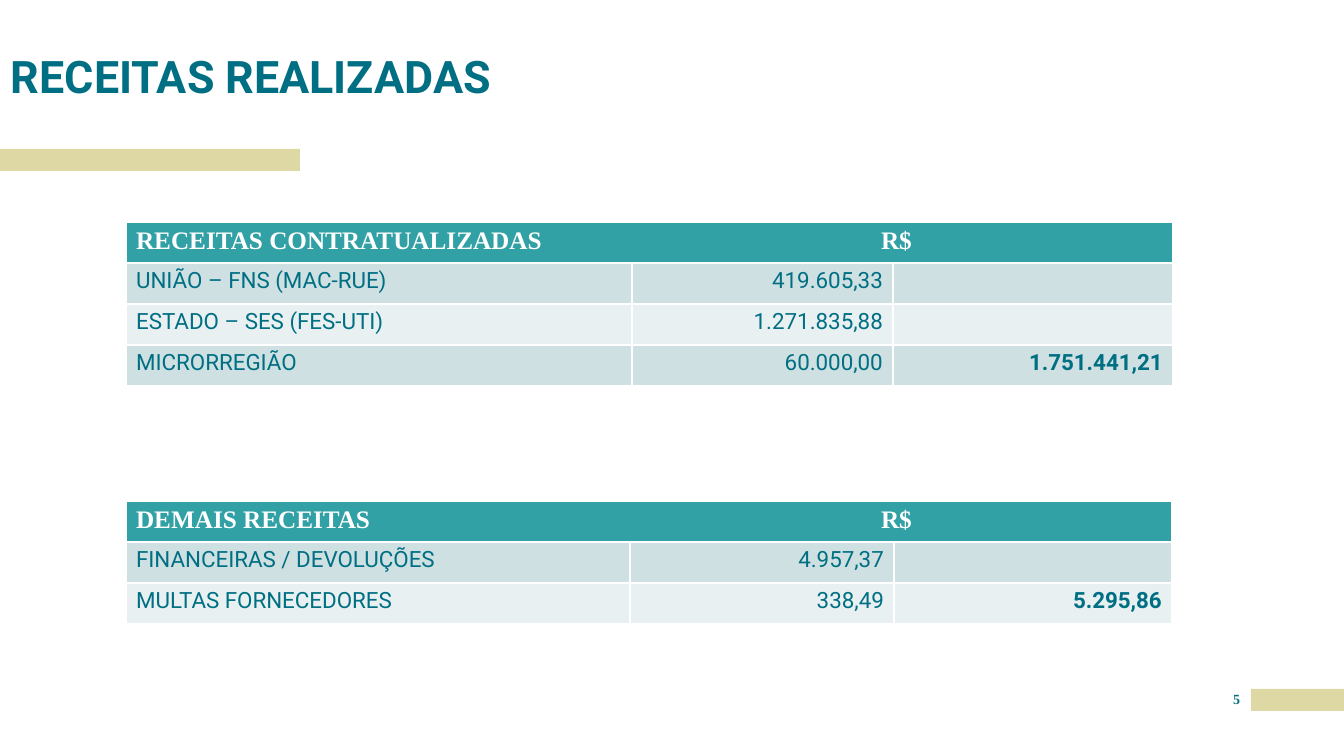
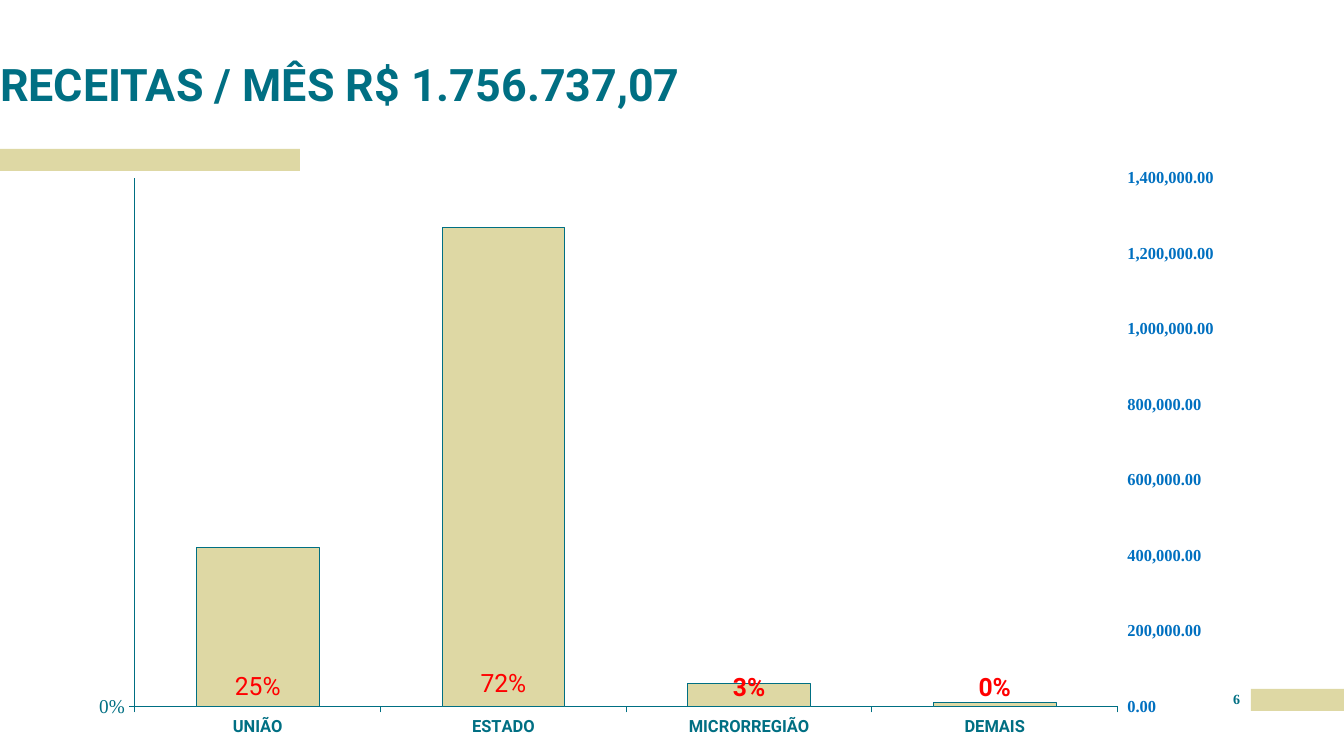
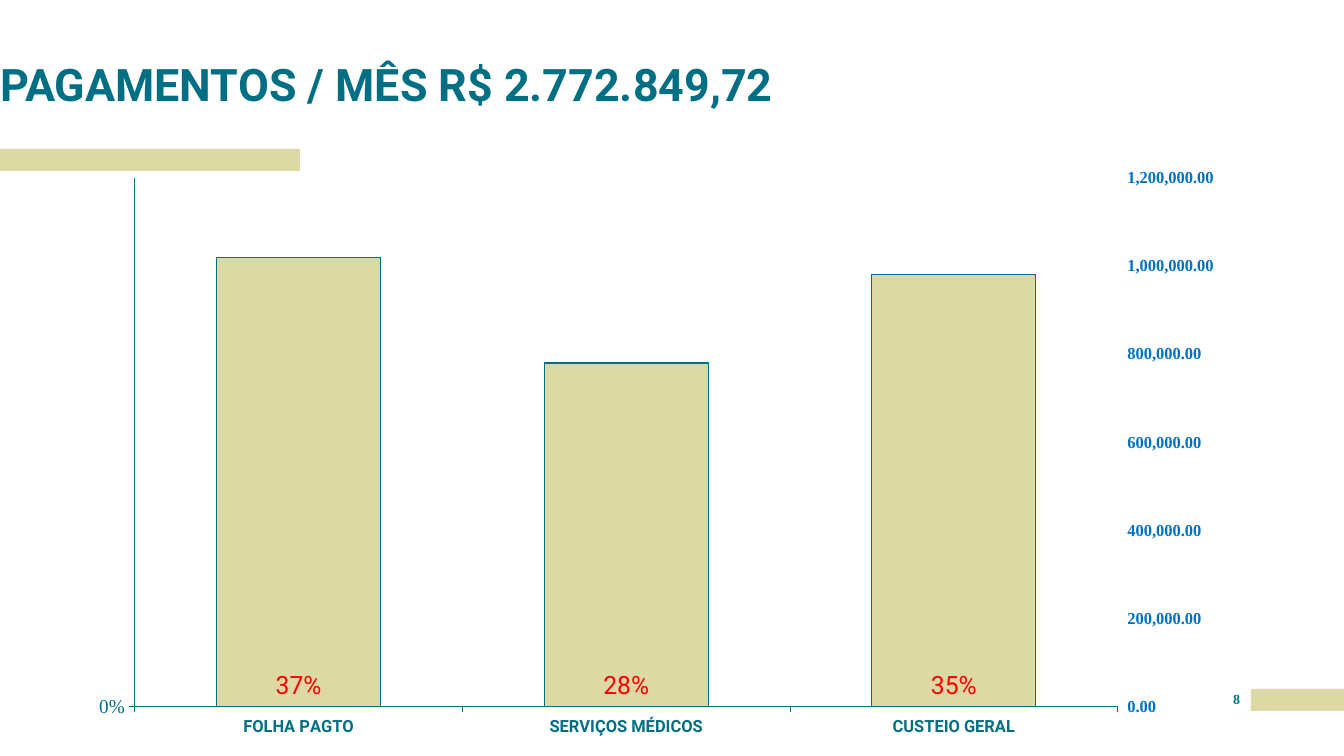
"""Build three slides on hospital revenue and payments."""
import copy

import lxml.etree
import pptx
import pptx.chart.axis
import pptx.chart.data
import pptx.dml.color
import pptx.enum.chart
import pptx.enum.shapes
import pptx.enum.text
import pptx.oxml
import pptx.oxml.ns
import pptx.util

RGBColor = pptx.dml.color.RGBColor
TEAL = RGBColor(0x00, 0x6F, 0x83)
HEADER = RGBColor(0x32, 0xA1, 0xA6)
ROW_DARK = RGBColor(0xCE, 0xE0, 0xE1)
ROW_LIGHT = RGBColor(0xE8, 0xF0, 0xF1)
GRID = RGBColor(0xA5, 0xE1, 0xE4)
SAND = RGBColor(0xDE, 0xD8, 0xA4)
BLUE = RGBColor(0x00, 0x70, 0xC0)
RED = RGBColor(0xFF, 0x00, 0x00)
WHITE = RGBColor(0xFF, 0xFF, 0xFF)
SANS = "Roboto"
SERIF = "Times New Roman"
ALIGN = pptx.enum.text.PP_ALIGN
qn = pptx.oxml.ns.qn


def px(*lengths):
    """Turn pixels into a list of EMU."""
    return [pptx.util.Emu(round(length * 914400 / 100.8)) for length in lengths]


def set_font(font, name, size, color, bold):
    """Set the four font properties."""
    font.name = name
    font.size = pptx.util.Pt(size)
    font.color.rgb = color
    font.bold = bold


deck = pptx.Presentation()
deck.slide_width, deck.slide_height = px(1344, 756)
layout = deck.slide_layouts[5]

titles = [
    ("RECEITAS REALIZADAS", "5", (11, 0, 941, 103)),
    ("RECEITAS / MÊS R$ 1.756.737,07", "6", (0, 45, 860, 66)),
    ("PAGAMENTOS / MÊS R$ 2.772.849,72", "8", (0, 45, 860, 66)),
]
pages = []
for heading, number, place in titles:
    page = deck.slides.add_slide(layout)
    pages.append(page)
    title = page.shapes.title
    title.left, title.top, title.width, title.height = px(*place)
    number_box = page.shapes.add_textbox(*px(1222, 691, 29, 25))
    for box, text, size, font_name, align in (
        (title, heading, 32, SANS, ALIGN.LEFT),
        (number_box, number, 10, SERIF, ALIGN.CENTER),
    ):
        frame = box.text_frame
        frame.text = text
        frame.word_wrap = True
        frame.margin_left = frame.margin_right = 0
        frame.margin_top = frame.margin_bottom = 0
        frame.paragraphs[0].alignment = align
        set_font(frame.paragraphs[0].runs[0].font, font_name, size, TEAL, True)
    title.text_frame.vertical_anchor = pptx.enum.text.MSO_ANCHOR.BOTTOM
    title.text_frame.paragraphs[0].line_spacing = 0.9

for place in ((1251, 689, 93, 22), (0, 149, 300, 22)):
    band = pages[0].shapes.add_shape(pptx.enum.shapes.MSO_SHAPE.RECTANGLE, *px(*place))
    band.shadow.inherit = False
    band.fill.solid()
    band.fill.fore_color.rgb = SAND
    band.line.fill.background()
    layout.shapes.element.append(band.element)

tables = [
    (126, 222, (506, 261, 280), [
        ("RECEITAS CONTRATUALIZADAS\tR$", "", ""),
        ("UNIÃO – FNS (MAC-RUE)", "419.605,33", ""),
        ("ESTADO – SES (FES-UTI)", "1.271.835,88", ""),
        ("MICRORREGIÃO", "60.000,00", "1.751.441,21"),
    ]),
    (126, 501, (504, 264, 278), [
        ("DEMAIS RECEITAS\tR$", "", ""),
        ("FINANCEIRAS / DEVOLUÇÕES", "4.957,37", ""),
        ("MULTAS FORNECEDORES", "338,49", "5.295,86"),
    ]),
]
for left, top, widths, rows in tables:
    holder = pages[0].shapes.add_table(
        len(rows), 3, *px(left, top, sum(widths), 41 * len(rows)))
    table = holder.table
    for column, width in zip(table.columns, px(*widths)):
        column.width = width
    table.cell(0, 0).merge(table.cell(0, 2))
    for r, texts in enumerate(rows):
        for c, text in enumerate(texts):
            cell = table.cell(r, c)
            cell.fill.solid()
            cell.fill.fore_color.rgb = (
                HEADER if r == 0 else ROW_DARK if r % 2 else ROW_LIGHT)
            if not text:
                continue
            para = cell.text_frame.paragraphs[0]
            para.text = text
            para.alignment = ALIGN.RIGHT if c else ALIGN.LEFT
            if r == 0:
                set_font(para.runs[0].font, SERIF, 18, WHITE, True)
            else:
                set_font(para.runs[0].font, SANS, 16, TEAL, c == 2)
    tabs = lxml.etree.SubElement(holder.element.find(".//" + qn("a:pPr")), qn("a:tabLst"))
    lxml.etree.SubElement(tabs, qn("a:tab"), pos=str(px(745)[0]), algn="l")

charts = [
    (pages[1], ["UNIÃO", "ESTADO", "MICRORREGIÃO", "DEMAIS"], [0.24, 0.72, 0.03, 0],
     [420000, 1270000, 60000, 10000], ["25%", "72%"], 1400000),
    (pages[2], ["FOLHA PAGTO", "SERVIÇOS MÉDICOS", "CUSTEIO GERAL"], [0.37, 0.28, 0.35],
     [1020000, 780000, 980000], ["37%", "28%", "35%"], 1200000),
]
TICK_OUT = pptx.enum.chart.XL_TICK_MARK.OUTSIDE
LABEL_END = pptx.enum.chart.XL_LABEL_POSITION.OUTSIDE_END
LAYOUT_XML = (
    '<c:layout xmlns:c="http://schemas.openxmlformats.org/drawingml/2006/chart">'
    '<c:manualLayout><c:layoutTarget val="inner"/><c:xMode val="edge"/>'
    '<c:yMode val="edge"/><c:x val="0.088"/><c:y val="0.031"/>'
    '<c:w val="0.849"/><c:h val="0.905"/></c:manualLayout></c:layout>')

for page, categories, shares, amounts, share_labels, top_amount in charts:
    data = pptx.chart.data.CategoryChartData()
    data.categories = categories
    data.add_series("Series 1", shares, "0%")
    data.add_series("Series 2", amounts, "#,##0.00")
    chart = page.shapes.add_chart(
        pptx.enum.chart.XL_CHART_TYPE.COLUMN_CLUSTERED, *px(33, 160, 1181, 584), data).chart
    chart.has_title = False
    chart.has_legend = False
    set_font(chart.font, SERIF, 10, TEAL, False)
    plot = chart.plots[0]
    plot.vary_by_categories = False
    plot.gap_width = 100
    plot.overlap = 100

    plot_area = chart.element.find(".//" + qn("c:plotArea"))
    for old_layout in plot_area.findall(qn("c:layout")):
        plot_area.remove(old_layout)
    plot_area.insert(0, pptx.oxml.parse_xml(LAYOUT_XML))
    share_bars = plot_area.find(qn("c:barChart"))
    amount_bars = copy.deepcopy(share_bars)
    share_bars.remove(share_bars.findall(qn("c:ser"))[1])
    amount_bars.remove(amount_bars.findall(qn("c:ser"))[0])
    share_bars.addnext(amount_bars)
    for axis_id, value in zip(amount_bars.findall(qn("c:axId")), ("100", "200")):
        axis_id.set("val", value)

    left_element = plot_area.find(qn("c:valAx"))
    right_element = copy.deepcopy(left_element)
    hidden_element = copy.deepcopy(plot_area.find(qn("c:catAx")))
    left_element.addnext(right_element)
    right_element.addnext(hidden_element)
    for element, settings in (
        (right_element, {"axId": "200", "crossAx": "100", "crosses": "max", "axPos": "r"}),
        (hidden_element, {"axId": "100", "crossAx": "200", "delete": "1"}),
    ):
        for tag, value in settings.items():
            element.find(qn("c:" + tag)).set("val", value)
    left_axis = pptx.chart.axis.ValueAxis(left_element)
    right_axis = pptx.chart.axis.ValueAxis(right_element)

    for axis, font_name, size, color, bold in (
        (chart.category_axis, SANS, 12, TEAL, True),
        (left_axis, SERIF, 14, TEAL, False),
        (right_axis, SERIF, 12, BLUE, True),
    ):
        axis.major_tick_mark = TICK_OUT
        set_font(axis.tick_labels.font, font_name, size, color, bold)
        axis.format.line.color.rgb = TEAL
        axis.format.line.width = pptx.util.Pt(0.75)
    right_axis.format.line.fill.background()
    right_axis.has_major_gridlines = False
    grid_line = left_axis.major_gridlines.format.line
    grid_line.color.rgb = GRID
    grid_line.width = pptx.util.Pt(0.75)
    for axis, maximum, step, number_format in (
        (left_axis, 100, 10000, "0%"),
        (right_axis, top_amount, 200000, "#,##0.00"),
    ):
        axis.minimum_scale = 0
        axis.maximum_scale = maximum
        axis.major_unit = step
        axis.tick_labels.number_format = number_format
        axis.tick_labels.number_format_is_linked = False

    share_series, amount_series = [part.series[0] for part in chart.plots]
    for series, color in ((share_series, TEAL), (amount_series, SAND)):
        series.format.fill.solid()
        series.format.fill.fore_color.rgb = color
    amount_series.format.line.color.rgb = TEAL
    amount_series.format.line.width = pptx.util.Pt(0.75)

    labels = share_series.data_labels
    labels.show_value = True
    labels.number_format = "0%"
    labels.number_format_is_linked = False
    labels.position = LABEL_END
    set_font(labels.font, SANS, 18, RED, True)
    for index, text in enumerate(share_labels):
        label = share_series.points[index].data_label
        label.text_frame.text = text
        set_font(label.text_frame.paragraphs[0].runs[0].font, SANS, 18, RED, False)
        label.position = LABEL_END

deck.save("out.pptx")
